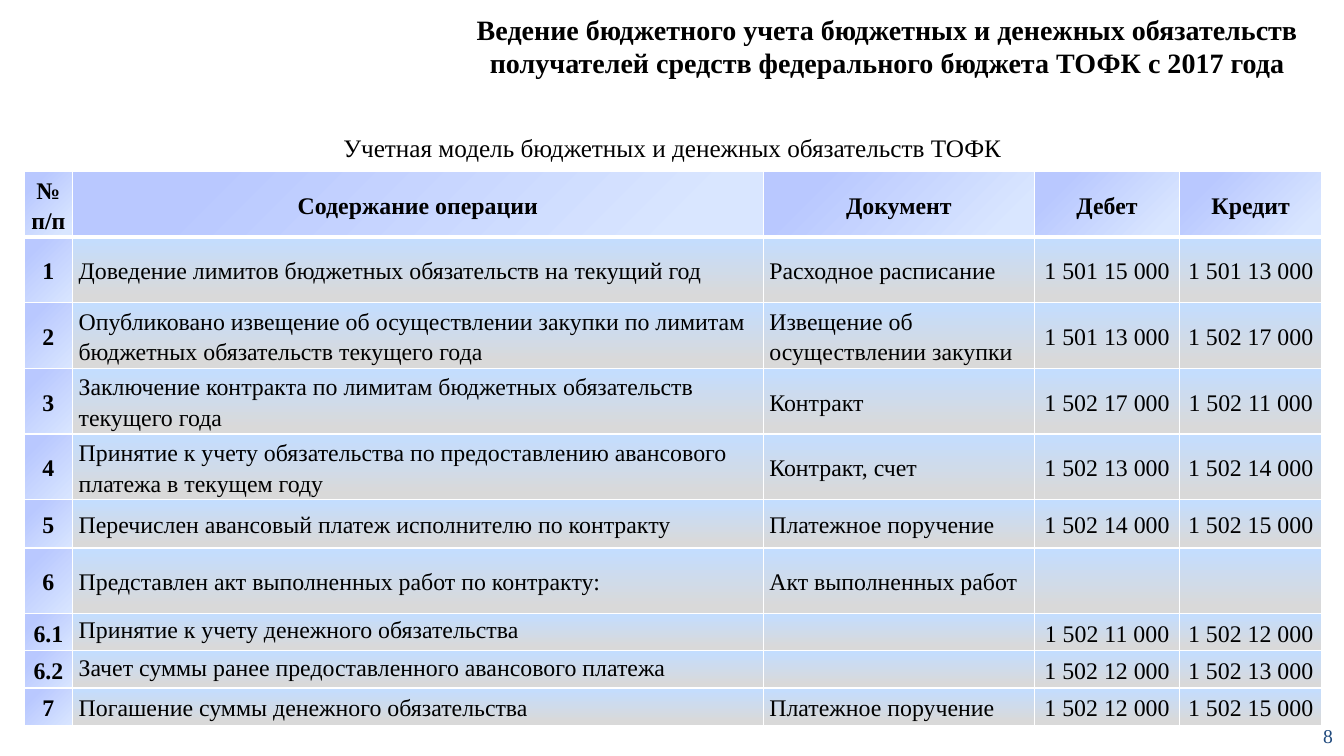
from lxml import etree
from pptx import Presentation, util as u
from pptx.dml.color import RGBColor
from pptx.enum import text
from pptx.oxml import ns

FONT = "Times New Roman"
MIDDLE = text.MSO_ANCHOR.MIDDLE
LEFT, CENTER, RIGHT = text.PP_ALIGN.LEFT, text.PP_ALIGN.CENTER, text.PP_ALIGN.RIGHT

COLUMN_WIDTHS = [0.48, 6.85, 2.69, 1.44, 1.41]
ROW_HEIGHTS = [0.65] * 5 + [0.48, 0.65] + [0.37] * 3
OPERATIONS = [
    ("№ п/п", "Содержание операции", "Документ", "Дебет", "Кредит"),
    ("1", "Доведение лимитов бюджетных обязательств на текущий год",
     "Расходное расписание", "1 501 15 000", "1 501 13 000"),
    ("2", "Опубликовано извещение об осуществлении закупки по лимитам бюджетных обязательств текущего года",
     "Извещение об осуществлении закупки", "1 501 13 000", "1 502 17 000"),
    ("3", "Заключение контракта по лимитам бюджетных обязательств текущего года",
     "Контракт", "1 502 17 000", "1 502 11 000"),
    ("4", "Принятие к учету обязательства по предоставлению авансового платежа в текущем году",
     "Контракт, счет", "1 502 13 000", "1 502 14 000"),
    ("5", "Перечислен авансовый платеж исполнителю по контракту",
     "Платежное поручение", "1 502 14 000", "1 502 15 000"),
    ("6", "Представлен акт выполненных работ по контракту:",
     "Акт выполненных работ", "", ""),
    ("6.1", "Принятие к учету денежного обязательства", "", "1 502 11 000", "1 502 12 000"),
    ("6.2", "Зачет суммы ранее предоставленного авансового платежа", "", "1 502 12 000", "1 502 13 000"),
    ("7", "Погашение суммы денежного обязательства",
     "Платежное поручение", "1 502 12 000", "1 502 15 000"),
]


def rgb(value):
    return RGBColor.from_string(value)


def child(parent, tag, **attributes):
    return etree.SubElement(parent, ns.qn(f"a:{tag}"), attributes)


def style(paragraph, size, align, color="000000", bold=False):
    paragraph.alignment = align
    paragraph.font.name = FONT
    paragraph.font.size = u.Pt(size)
    paragraph.font.bold = bold
    paragraph.font.color.rgb = rgb(color)


def add_label(slide, box, wording, size, align=CENTER, color="000000",
              bold=False, anchor=MIDDLE, wrap=True):
    frame = slide.shapes.add_textbox(*map(u.Inches, box)).text_frame
    frame.word_wrap = wrap
    frame.vertical_anchor = anchor
    frame.text = wording
    style(frame.paragraphs[0], size, align, color, bold)


def add_borders(cell, bottom_width):
    properties = cell._tc.get_or_add_tcPr()
    for side, width in zip("LRTB", (1, 1, 1, bottom_width)):
        line = child(properties, f"ln{side}", w=str(u.Pt(width)))
        child(child(line, "solidFill"), "srgbClr", val="FFFFFF")


def add_gradient(cell, stops, radial):
    gradient = child(cell._tc.get_or_add_tcPr(), "gradFill", rotWithShape="1")
    stop_list = child(gradient, "gsLst")
    for position, color in stops:
        child(child(stop_list, "gs", pos=str(position * 1000)), "srgbClr", val=color)
    if radial:
        child(child(gradient, "path", path="circle"), "fillToRect", r="100000", b="100000")
    else:
        child(gradient, "lin", ang="5400000", scaled="0")


def fill_cell(cell, wording, row, column):
    is_header = row == 0
    is_heading = is_header or column == 0
    is_sub_operation = column == 1 and OPERATIONS[row][0].startswith("6.")
    cell.vertical_anchor = text.MSO_ANCHOR.TOP if is_sub_operation else MIDDLE
    cell.margin_left = cell.margin_right = u.Inches(0.06)
    cell.margin_top = cell.margin_bottom = 0
    cell.text = wording
    paragraph = cell.text_frame.paragraphs[0]
    paragraph.line_spacing = 1.15
    style(paragraph, 17, LEFT if not is_header and column in (1, 2) else CENTER, bold=is_heading)
    add_borders(cell, 3 if is_header else 1)
    if is_heading:
        stops = [(18, "B9C8FF"), (89 if is_header else 100, "D9E6FF")]
    else:
        stops = [(0, "C3DDFF"), (91, "D9D9D9")]
    add_gradient(cell, stops, is_heading)


def add_accounting_table(slide, box):
    table = slide.shapes.add_table(
        len(OPERATIONS), len(COLUMN_WIDTHS), *map(u.Inches, box)).table
    table.first_row = table.horz_banding = False
    for column, width in zip(table.columns, COLUMN_WIDTHS):
        column.width = u.Inches(width)
    for row, height in zip(table.rows, ROW_HEIGHTS):
        row.height = u.Inches(height)
    for row, operation in enumerate(OPERATIONS):
        for column, wording in enumerate(operation):
            fill_cell(table.cell(row, column), wording, row, column)


def main():
    deck = Presentation()
    deck.slide_width, deck.slide_height = u.Inches(13.33), u.Inches(7.5)
    slide = deck.slides.add_slide(deck.slide_layouts[6])
    add_label(slide, (12.86, 7.14, 0.46, 0.32), "8", 14, RIGHT, "1F497D", wrap=False)
    add_accounting_table(slide, (0.24, 1.7, 12.86, 5.5))
    add_label(slide, (1.84, 1.19, 9.66, 0.54),
              "Учетная модель бюджетных и денежных обязательств ТОФК", 18)
    add_label(slide, (4.28, 0.07, 9.04, 0.77),
              "Ведение бюджетного учета бюджетных и денежных обязательств "
              "получателей средств федерального бюджета ТОФК с 2017 года",
              20, bold=True, anchor=text.MSO_ANCHOR.TOP)
    deck.save("out.pptx")


if __name__ == "__main__":
    main()
